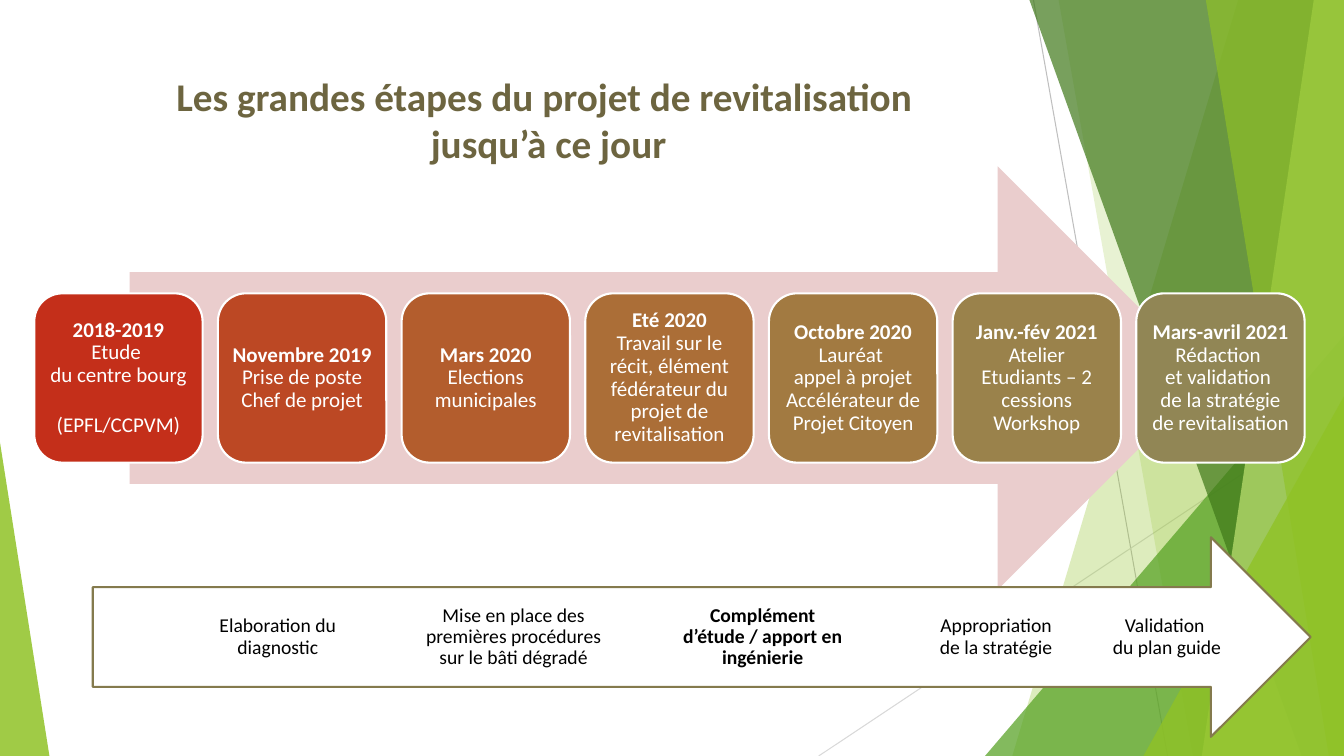
from lxml import etree
from pptx import Presentation
from pptx.dml.color import RGBColor
from pptx.enum.shapes import MSO_CONNECTOR, MSO_SHAPE
from pptx.enum.text import MSO_ANCHOR, PP_ALIGN
from pptx.oxml.ns import qn
from pptx.util import Inches, Pt

FONT = "Calibri"
COLORS = {
    "white": "FFFFFF", "black": "000000", "title": "6D6540",
    "timeline": "EACDCD", "outline": "847A4D",
    "grey": "BFBFBF", "light_grey": "D9D9D9",
    "green": "90C226", "mid_green": "54A021",
    "dark_green": "3F7819", "pale_green": "C0E474",
}
STEPS = [
    ("C42F1A", "2018-2019", "Etude \ndu centre bourg \n(EPFL/CCPVM)"),
    ("BC4824", "Novembre 2019", "Prise de poste Chef de projet"),
    ("B35D2D", "Mars 2020", "Elections municipales"),
    ("AB6E37", "Eté 2020",
     "Travail sur le récit, élément fédérateur du projet de revitalisation"),
    ("A27A41", "Octobre 2020",
     "Lauréat \nappel à projet Accélérateur de Projet Citoyen"),
    ("9A824B", "Janv.-fév 2021", "Atelier Etudiants – 2 cessions Workshop"),
    ("918655", "Mars-avril 2021",
     "Rédaction \net validation \nde la stratégie de revitalisation"),
]
# Phase: left offset in the arrow, width, text, bold
PHASES = [
    (0.92, 1.83, "Elaboration du diagnostic", False),
    (3.26, 1.83, "Mise en place des premières procédures sur le bâti dégradé", False),
    (5.73, 1.83, "Complément d’étude / apport en ingénierie", True),
    (8.36, 1.2, "Appropriation de la stratégie", False),
    (9.74, 1.83, "Validation \ndu plan guide", False),
]


def rgb(value):
    return RGBColor.from_string(value)


def paint(shape, fill, line=None, opacity=100):
    shape.shadow.inherit = False
    shape.fill.solid()
    shape.fill.fore_color.rgb = rgb(fill)
    if opacity < 100:
        color = shape.fill._xPr.find(qn("a:solidFill"))[0]
        etree.SubElement(color, qn("a:alpha"), val=str(opacity * 1000))
    if line:
        shape.line.color.rgb = rgb(line)
        shape.line.width = Pt(1.5)
    else:
        shape.line.fill.background()


def add_preset(slide, kind, box, fill, line=None, opacity=100):
    shape = slide.shapes.add_shape(kind, *map(Inches, box))
    paint(shape, fill, line, opacity)
    return shape


def write_text(shape, text, size, color, inset_x, inset_y, anchor=MSO_ANCHOR.MIDDLE):
    """Fill a shape with one centred paragraph and return its runs."""
    frame = shape.text_frame
    frame.word_wrap = True
    frame.vertical_anchor = anchor
    frame.margin_left = frame.margin_right = Inches(inset_x)
    frame.margin_top = frame.margin_bottom = Inches(inset_y)
    paragraph = frame.paragraphs[0]
    paragraph.text = text
    paragraph.alignment = PP_ALIGN.CENTER
    for run in paragraph.runs:
        run.font.name = FONT
        run.font.size = Pt(size)
        run.font.color.rgb = rgb(color)
        run.font.bold = False
    return paragraph.runs


def add_backdrop(slide, width, height):
    # Thin grey lines
    for points, color in [((10.25, 0, 11.58, height), "grey"),
                          ((width, 4.03, 8.12, height), "light_grey")]:
        line = slide.shapes.add_connector(MSO_CONNECTOR.STRAIGHT, *map(Inches, points))
        line.line.color.rgb = rgb(COLORS[color])
        line.line.width = Pt(0.75)
        etree.SubElement(line._element.spPr, qn("a:effectLst"))

    # Bands reach the right edge: top x, bottom x, colour, opacity
    def add_band(top_x, bottom_x, color, opacity):
        corners = [(top_x, 0), (width, 0), (width, height), (bottom_x, height)]
        points = [(Inches(x), Inches(y)) for x, y in corners]
        builder = slide.shapes.build_freeform(*points[0])
        builder.add_line_segments(points[1:], close=True)
        paint(builder.convert_to_shape(), COLORS[color], opacity=opacity)

    # Triangles stand on the bottom edge, apex at the left (0) or right (1)
    def add_triangle(left, top, triangle_width, apex, color, opacity):
        triangle = add_preset(slide, MSO_SHAPE.ISOSCELES_TRIANGLE,
                              (left, top, triangle_width, height - top),
                              COLORS[color], opacity=opacity)
        triangle.adjustments[0] = apex

    add_band(12.28, 10.04, "green", 30)
    add_band(10.5, 11.83, "green", 20)
    add_triangle(9.77, 3.33, 3.56, 1, "mid_green", 72)
    add_band(10.21, 12.91, "dark_green", 70)
    add_band(13.03, 11.92, "pale_green", 70)
    add_band(11.96, 13.18, "green", 65)
    add_triangle(11.34, 3.93, 1.99, 1, "green", 80)
    add_triangle(0, 4.39, 0.49, 0, "green", 85)


def add_title(slide, box):
    title = slide.shapes.title
    title.left, title.top, title.width, title.height = map(Inches, box)
    text = "Les grandes étapes du projet de revitalisation \njusqu’à ce jour"
    for run in write_text(title, text, 28, COLORS["title"], 0.1, 0.05, MSO_ANCHOR.TOP):
        run.font.bold = True


def add_timeline(slide, box):
    left, top, width, height = box
    # Arrow behind the cards
    arrow_width = width * 0.85
    add_preset(slide, MSO_SHAPE.RIGHT_ARROW,
               (left + (width - arrow_width) / 2, top, arrow_width, height),
               COLORS["timeline"])
    # One card per step, evenly spaced
    card_width, card_height = 1.67, 1.68
    pitch = (width - card_width) / (len(STEPS) - 1)
    for index, (color, date, detail) in enumerate(STEPS):
        card = add_preset(slide, MSO_SHAPE.ROUNDED_RECTANGLE,
                          (left + index * pitch, top + (height - card_height) / 2,
                           card_width, card_height), color, COLORS["white"])
        runs = write_text(card, f"{date}\n{detail}", 15, COLORS["white"], 0.06, 0.06)
        runs[0].font.bold = True
        card.text_frame.paragraphs[0].line_spacing = 0.9


def add_phases(slide, box):
    left, top, width, height = box
    add_preset(slide, MSO_SHAPE.RIGHT_ARROW, box, COLORS["white"], COLORS["outline"])
    # Labels sit in the shaft, which is half the arrow high
    for offset, label_width, text, bold in PHASES:
        label_box = (left + offset, top + height / 4, label_width, height / 2)
        label = slide.shapes.add_textbox(*map(Inches, label_box))
        for run in write_text(label, text, 14, COLORS["black"], 0, 0.16):
            run.font.bold = bold
        label.text_frame.paragraphs[0].line_spacing = 0.9


def main():
    presentation = Presentation()
    presentation.slide_width = Inches(13.33)
    presentation.slide_height = Inches(7.5)
    slide = presentation.slides.add_slide(presentation.slide_layouts[5])
    add_backdrop(slide, 13.33, 7.5)
    add_title(slide, (0.74, 0.67, 9.4, 1.44))
    add_timeline(slide, (0.34, 1.65, 12.6, 4.2))
    add_phases(slide, (0.92, 5.33, 12.08, 1.98))
    presentation.save("out.pptx")


if __name__ == "__main__":
    main()
